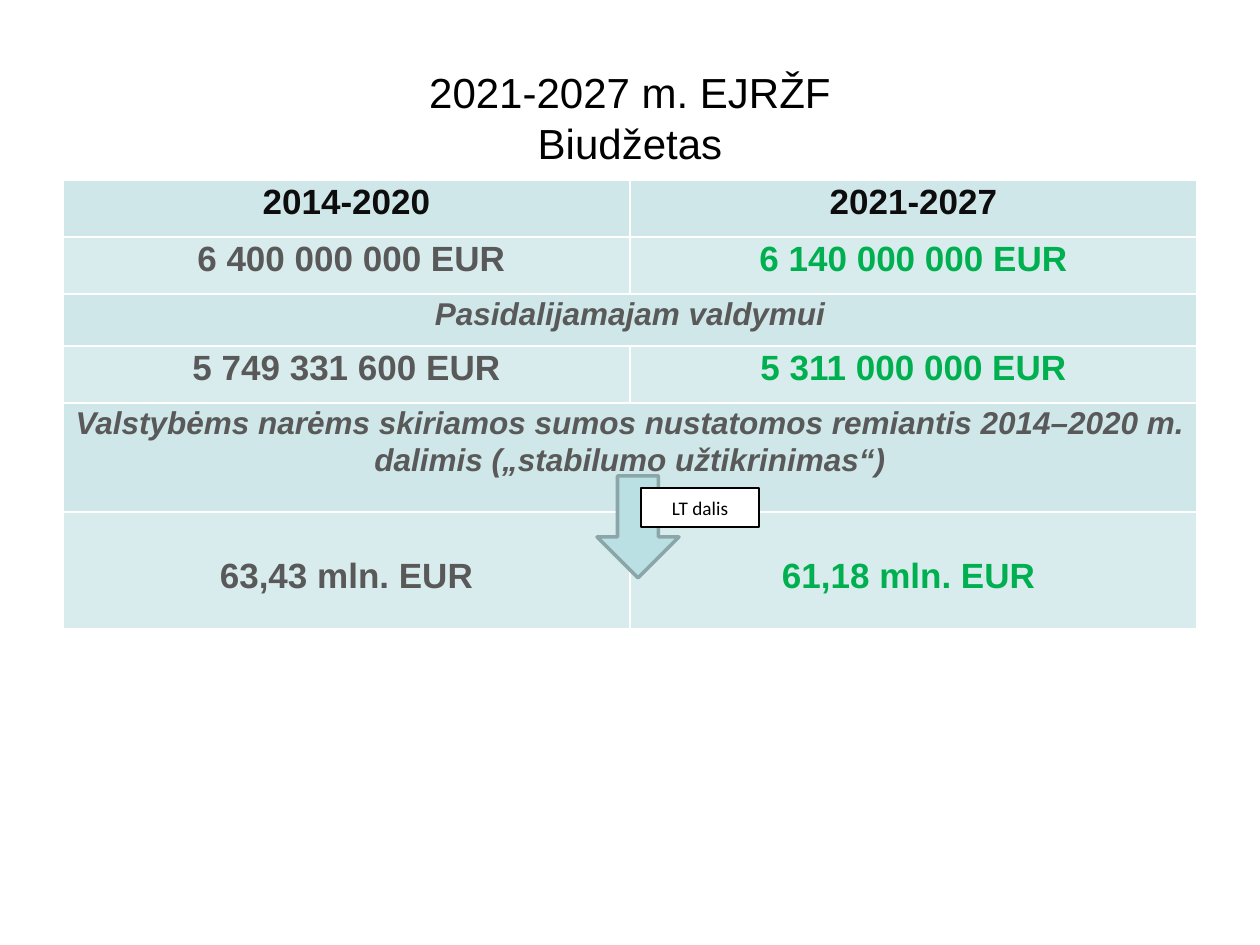
from pptx import Presentation
from pptx.dml.color import RGBColor
from pptx.enum.shapes import MSO_SHAPE
from pptx.enum.text import MSO_ANCHOR, PP_ALIGN
from pptx.util import Pt

CENTER, MIDDLE, TOP = PP_ALIGN.CENTER, MSO_ANCHOR.MIDDLE, MSO_ANCHOR.TOP
ARROW, RECT = MSO_SHAPE.DOWN_ARROW, MSO_SHAPE.RECTANGLE
PX = 914400 / 126
HUES = {"black": "000000", "head": "0D0D0D", "gray": "595959",
        "green": "00B050", "dark": "CFE7E9", "light": "D9ECED",
        "teal": "BBE0E3", "edge": "8AA6A8", "white": "FFFFFF"}


def box(*sizes):
    return [round(n * PX) for n in sizes]


def write(frame, text, size=20, color="gray", font="Arial", bold=False,
          italic=False, space=1.07):
    para = frame.paragraphs[0]
    para.text = text
    para.alignment = CENTER
    para.line_spacing = space
    for run in para.runs:
        face = run.font
        face.name, face.size = font, Pt(size)
        face.bold, face.italic = bold, italic
        face.color.rgb = RGBColor.from_string(HUES[color])


deck = Presentation()
deck.slide_width, deck.slide_height = box(1260, 945)
slide = deck.slides.add_slide(deck.slide_layouts[6])
shapes = slide.shapes

# Title
title = shapes.add_textbox(*box(63, 38, 1134, 158)).text_frame
title.word_wrap = True
title.vertical_anchor = MIDDLE
write(title, "2021-2027 m. EJRŽF\vBiudžetas", size=24, color="black", space=1.0)

# Budget table: height, then one text across or one per period
rows = [
    (57, ["2014-2020", "2021-2027"]),
    (57, [" 6 400 000 000 EUR", "6 140 000 000 EUR"]),
    (52, ["Pasidalijamajam valdymui"]),
    (57, ["5 749 331 600 EUR", "5 311 000 000 EUR"]),
    (109, ["Valstybėms narėms skiriamos sumos nustatomos remiantis "
           "2014–2020 m. dalimis („stabilumo užtikrinimas“)"]),
    (117, ["63,43 mln. EUR", "61,18 mln. EUR "]),
]
grid = shapes.add_table(len(rows), 2, *box(63, 180, 1134, 449)).table
side, drop = box(9, 42)
for r, (high, texts) in enumerate(rows):
    grid.rows[r].height = box(high)[0]
    wide = len(texts) == 1
    for c in range(2):
        cell = grid.cell(r, c)
        cell.fill.solid()
        cell.fill.fore_color.rgb = RGBColor.from_string(
            HUES["light" if r % 2 else "dark"])
        cell.margin_left = cell.margin_right = side
        cell.margin_top = drop if r == len(rows) - 1 else 0
        cell.margin_bottom = 0
        cell.vertical_anchor = TOP
    if wide:
        grid.cell(r, 0).merge(grid.cell(r, 1))
    for c, text in enumerate(texts):
        hue = "head" if r == 0 else "green" if c else "gray"
        write(grid.cell(r, c).text_frame, text, size=18 if wide else 20,
              color=hue, bold=True, italic=wide)

# Arrow and its label
for kind, place, fill, line, width in [
    (ARROW, (597, 476, 82, 102), "teal", "edge", 2),
    (RECT, (641, 488, 118, 39), "white", "black", 0.75),
]:
    mark = shapes.add_shape(kind, *box(*place))
    mark.shadow.inherit = False
    mark.fill.solid()
    mark.fill.fore_color.rgb = RGBColor.from_string(HUES[fill])
    mark.line.color.rgb = RGBColor.from_string(HUES[line])
    mark.line.width = Pt(width)
label = mark.text_frame
label.vertical_anchor = MIDDLE
write(label, "LT dalis", size=11, color="black", font="Calibri")

deck.save("out.pptx")
